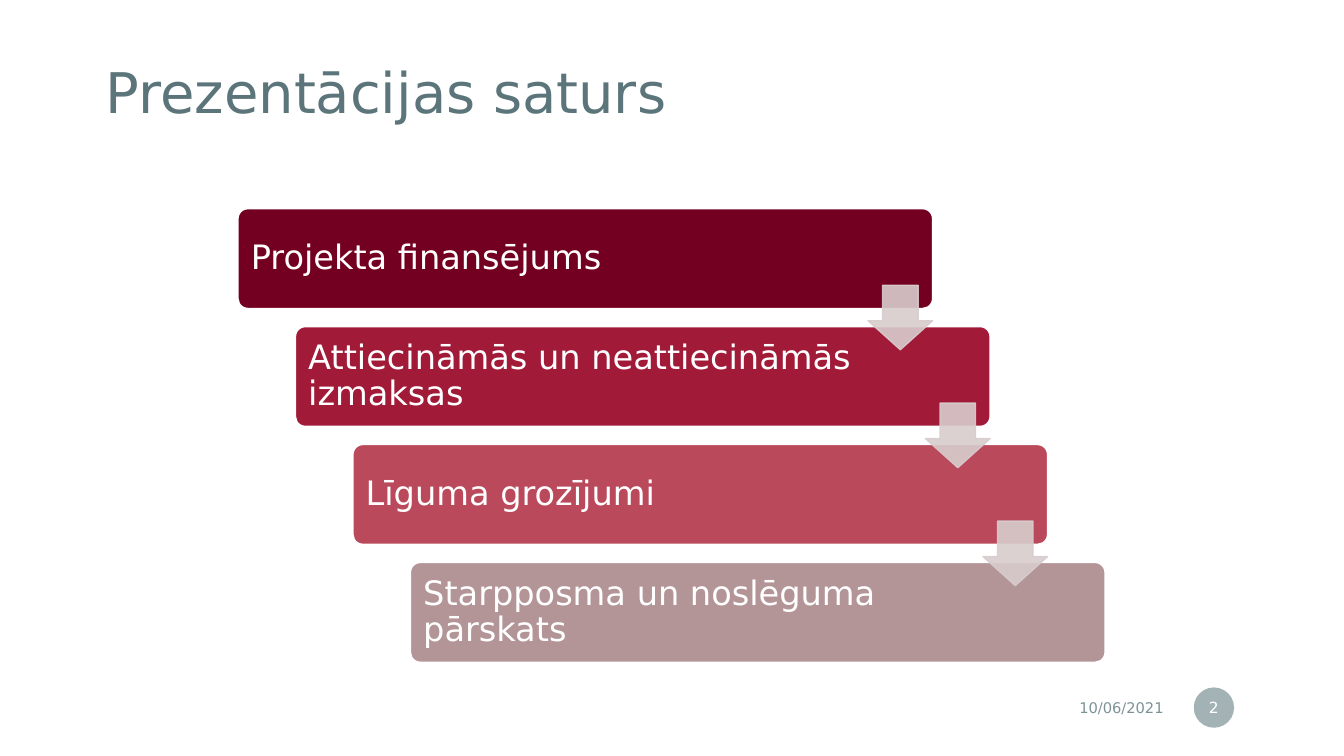
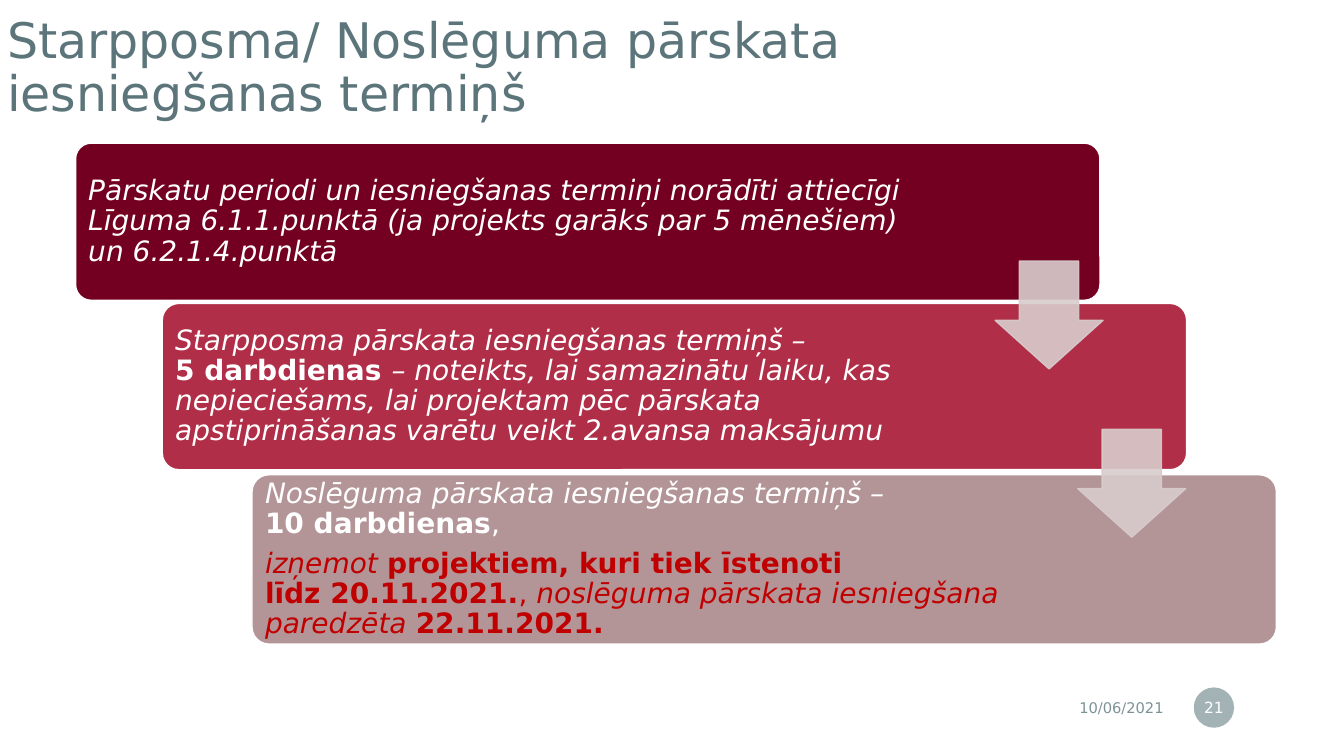
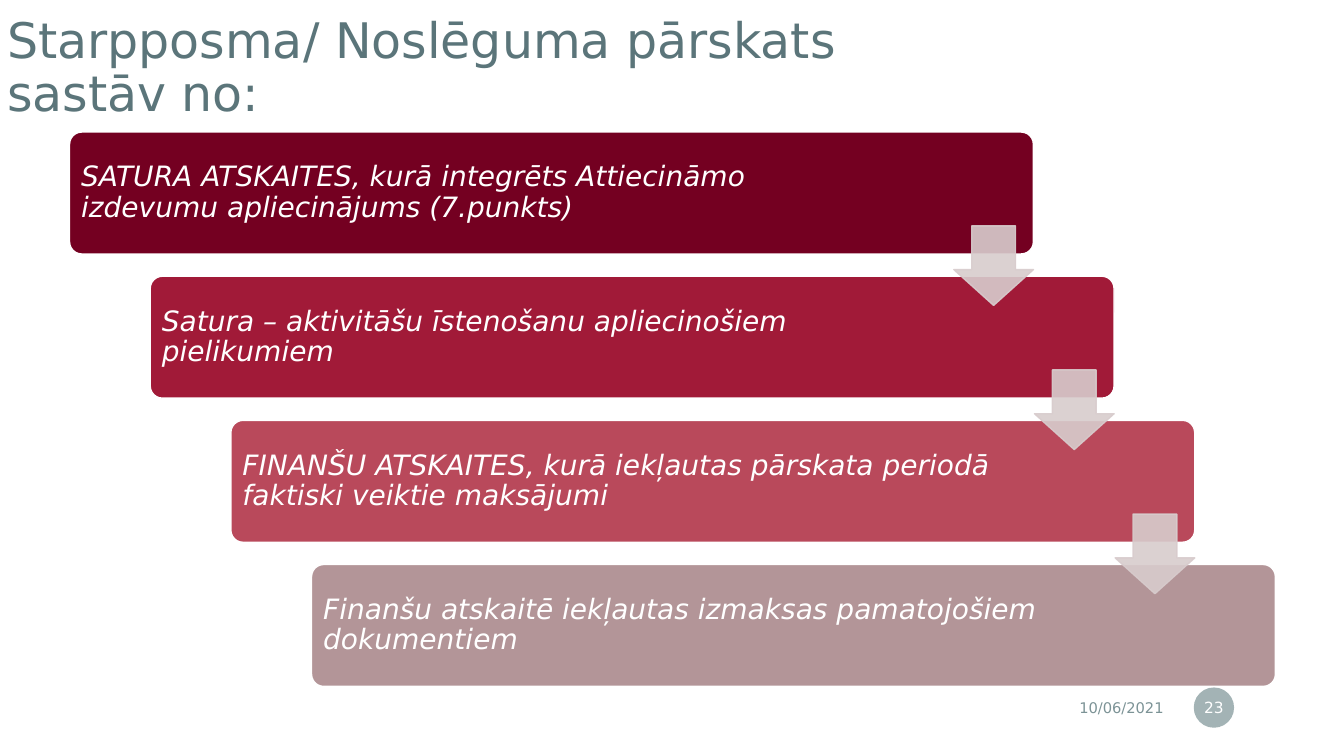
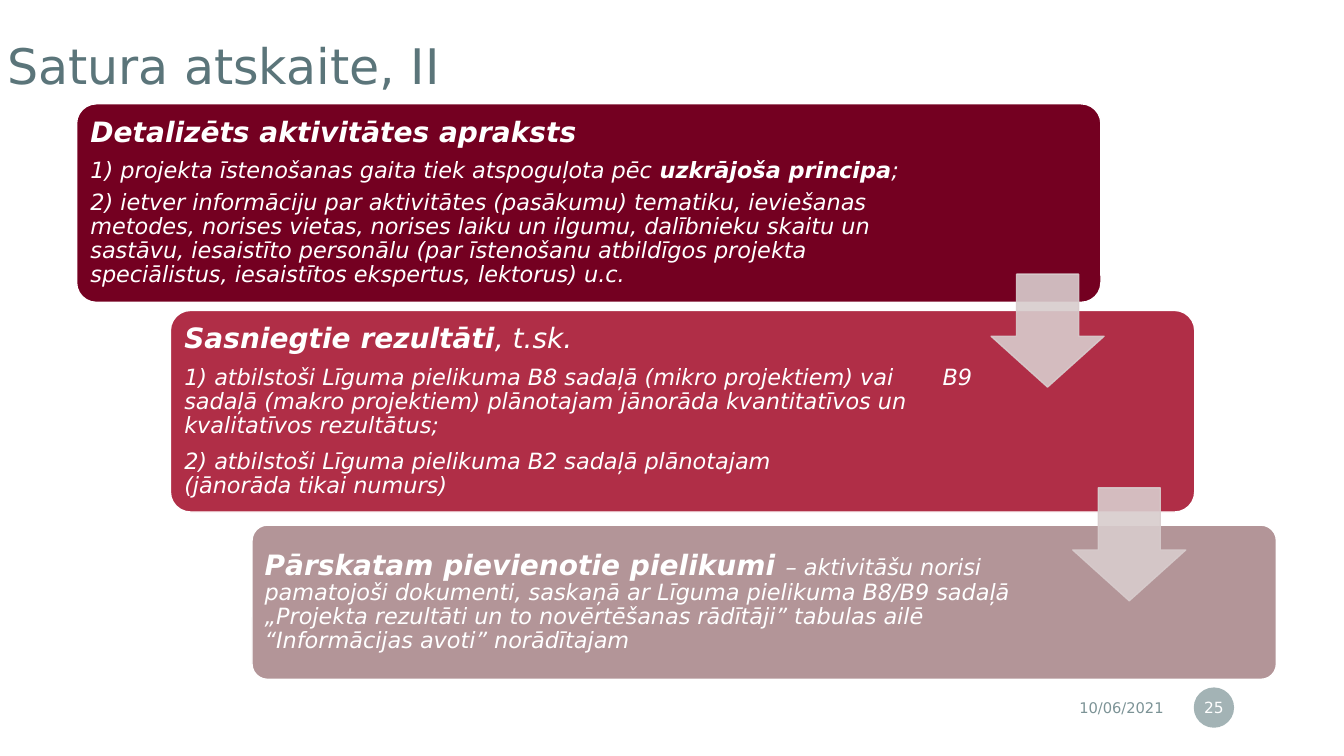
from dataclasses import dataclass

from lxml.etree import SubElement
from pptx import Presentation
from pptx.dml.color import RGBColor
from pptx.enum.shapes import MSO_SHAPE as SHAPE
from pptx.enum.text import MSO_ANCHOR as ANCHOR, MSO_AUTO_SIZE as AUTO, PP_ALIGN as ALIGN
from pptx.oxml.ns import qn
from pptx.util import Inches, Pt

FONT = "DejaVu Sans"
WHITE = RGBColor(0xFF, 0xFF, 0xFF)
SLATE = RGBColor(0x5B, 0x75, 0x7A)
GREY = RGBColor(0x7C, 0x93, 0x96)
WINE = RGBColor(0x74, 0x00, 0x21)
RUBY = RGBColor(0xA1, 0x1A, 0x38)
CRIMSON = RGBColor(0xB0, 0x2E, 0x47)
ROSE = RGBColor(0xB9, 0x49, 0x5B)
DUST = RGBColor(0xB3, 0x95, 0x98)
ARROW = RGBColor(0xD8, 0xCC, 0xCD)
RED = RGBColor(0xC0, 0x00, 0x00)
FOUR = (WINE, RUBY, ROSE, DUST)
THREE = (WINE, CRIMSON, DUST)


@dataclass
class Para:
    """Paragraph of (text, style[, size]) runs, where style may hold b and i."""
    runs: list
    size: float = 20
    color: RGBColor = WHITE
    gap: float = 7
    tab: float = 0


class Deck:
    """Presentation style together with the slide being built."""

    def __init__(self):
        """Start an empty wide presentation."""
        self.prs = Presentation()
        self.prs.slide_width, self.prs.slide_height = Inches(13.33), Inches(7.5)

    def slide(self, title, number, at=(-0.13, 0.09, 11.41, 1.19), size=35):
        """Add a slide with its title, date and number."""
        self.s = self.prs.slides.add_slide(self.prs.slide_layouts[5])
        sp = self.s.shapes.title
        sp.left, sp.top, sp.width, sp.height = map(Inches, at)
        tf = self.frame(sp, (0.2,) * 4)
        tf.text = title
        self.style(tf.paragraphs[0], size, SLATE)
        self.footer(number)

    def frame(self, sp, insets):
        """Prepare the text frame of a shape."""
        tf = sp.text_frame
        tf.word_wrap, tf.auto_size = True, AUTO.NONE
        tf.vertical_anchor = ANCHOR.MIDDLE
        tf.margin_left, tf.margin_top, tf.margin_right, tf.margin_bottom = map(Inches, insets)
        return tf

    def style(self, p, size, color, align=ALIGN.LEFT, spacing=0.9):
        """Format a whole paragraph."""
        p.alignment, p.line_spacing = align, spacing
        p.font.name, p.font.size, p.font.color.rgb = FONT, Pt(size), color

    def shape(self, kind, at, color, line=None, alpha=100):
        """Add a flat preset shape."""
        sp = self.s.shapes.add_shape(kind, *map(Inches, at))
        sp.shadow.inherit = False
        sp.fill.solid()
        sp.fill.fore_color.rgb = color
        if line is None:
            sp.line.fill.background()
        else:
            sp.line.color.rgb, sp.line.width = line, Pt(1)
        if alpha < 100:
            for clr in sp._element.spPr.iter(qn("a:srgbClr")):
                SubElement(clr, qn("a:alpha"), val=str(alpha * 1000))
        return sp

    def footer(self, number):
        """Add the date and the numbered disc."""
        sp = self.s.shapes.add_textbox(*map(Inches, (8.63, 6.84, 3.01, 0.35)))
        tf = self.frame(sp, (0.1, 0.05, 0.1, 0.05))
        tf.text = "10/06/2021"
        self.style(tf.paragraphs[0], 10.5, GREY, ALIGN.RIGHT, 1)
        sp = self.shape(SHAPE.OVAL, (11.84, 6.82, 0.4, 0.4), GREY, alpha=70)
        tf = self.frame(sp, (0.02, 0.05, 0.02, 0.05))
        tf.text = str(number)
        self.style(tf.paragraphs[0], 11, WHITE, ALIGN.CENTER, 1)

    def band(self, at, color, paras, right, inset):
        """Add a rounded band with text kept clear of its right end."""
        sp = self.shape(SHAPE.ROUNDED_RECTANGLE, at, color, WHITE)
        sp.adjustments[0] = 0.1
        tf = self.frame(sp, (inset, inset, right, inset))
        for i, para in enumerate(paras):
            p = tf.add_paragraph() if i else tf.paragraphs[0]
            self.fill(p, para)
            if i < len(paras) - 1:
                p.space_after = Pt(para.gap)

    def fill(self, p, para):
        """Write the runs of a paragraph."""
        if para.tab:
            tabs = SubElement(p._p.get_or_add_pPr(), qn("a:tabLst"))
            SubElement(tabs, qn("a:tab"), pos=str(Inches(para.tab)), algn="l")
        self.style(p, para.size, para.color)
        for text, style, *size in para.runs:
            for i, part in enumerate(text.split("\n")):
                if i:
                    p.add_line_break()
                if part:
                    r = p.add_run()
                    r.text = part
                    r.font.bold, r.font.italic = "b" in style, "i" in style
                    if size:
                        r.font.size = Pt(size[0])

    def arrow(self, x, y, size):
        """Add a translucent arrow pointing down."""
        sp = self.shape(SHAPE.DOWN_ARROW, (x, y, size, size), ARROW, ARROW, 90)
        sp.adjustments[0], sp.adjustments[1] = 0.55, 0.45

    def stairs(self, start, step, size, texts, rights, inset, arrow, drop):
        """Add four evenly stepped bands joined by arrows."""
        (x, y), (dx, dy), (w, h) = start, step, size
        spots = [(x + i * dx, y + i * dy) for i in range(len(texts))]
        for (left, top), color, para, right in zip(spots, FOUR, texts, rights):
            self.band((left, top, w, h), color, [para], right, inset)
        for left, top in spots[:-1]:
            self.arrow(left + w - arrow, top + drop, arrow)

    def steps(self, bands, arrows, arrow):
        """Add three bands of their own heights joined by arrows."""
        for (x, y, h, right, paras), color in zip(bands, THREE):
            self.band((x, y, 10.16, h), color, paras, right, 0.08)
        for x, y in arrows:
            self.arrow(x, y, arrow)


def main():
    """Build and save the slides."""
    deck = Deck()

    deck.slide("Prezentācijas saturs", 2, (0.85, 0.35, 8.39, 1.19), 40)
    topics = ("Projekta finansējums", "Attiecināmās un neattiecināmās izmaksas",
              "Līguma grozījumi", "Starpposma un noslēguma pārskats")
    deck.stairs((2.36, 2.07), (0.57, 1.17), (6.89, 0.99),
                [Para([(t, "")], 24) for t in topics],
                (1.19, 1.32, 1.32, 1.32), 0.1, 0.64, 0.76)

    deck.slide("Starpposma/ Noslēguma pārskata iesniegšanas termiņš", 21)
    deck.steps([
        (0.75, 1.42, 1.56, 1.77, [Para([
            ("Pārskatu periodi un iesniegšanas termiņi norādīti attiecīgi Līguma 6.1.1.punktā "
             "(ja projekts garāks par 5 mēnešiem) un 6.2.1.4.punktā", "i")])]),
        (1.61, 3.01, 1.65, 2.06, [Para([
            ("Starpposma pārskata iesniegšanas termiņš –\n", "i"),
            ("5 darbdienas ", "b"),
            ("– noteikts, lai samazinātu laiku, kas nepieciešams, lai projektam pēc pārskata "
             "apstiprināšanas varētu veikt 2.avansa maksājumu", "i")])]),
        (2.5, 4.71, 1.68, 2.06, [
            Para([("Noslēguma pārskata iesniegšanas termiņš –\n", "i"),
                  ("10 darbdienas", "b"), (",", "")]),
            Para([("izņemot ", "i"),
                  ("projektiem, kuri tiek īstenoti\nlīdz 20.11.2021.", "b"), (", ", ""),
                  ("noslēguma pārskata iesniegšana paredzēta ", "i"),
                  ("22.11.2021.", "b")], color=RED)]),
    ], [(9.87, 2.59), (10.69, 4.26)], 1.07)

    deck.slide("Starpposma/ Noslēguma pārskats\vsastāv no:", 23)
    parts = ("SATURA ATSKAITES, kurā integrēts Attiecināmo izdevumu apliecinājums (7.punkts)",
             "Satura – aktivitāšu īstenošanu apliecinošiem pielikumiem",
             "FINANŠU ATSKAITES, kurā iekļautas pārskata periodā faktiski veiktie maksājumi",
             "Finanšu atskaitē iekļautas izmaksas pamatojošiem dokumentiem")
    deck.stairs((0.69, 1.31), (0.8, 1.43), (9.56, 1.21),
                [Para([(t, "i")]) for t in parts],
                (1.42, 1.67, 1.67, 1.67), 0.08, 0.79, 0.93)

    deck.slide("Satura atskaite, II", 25)
    deck.steps([
        (0.76, 1.03, 1.97, 1.83, [
            Para([("Detalizēts aktivitātes apraksts", "bi")]),
            Para([("1) projekta īstenošanas gaita tiek atspoguļota pēc ", "i"),
                  ("uzkrājoša principa", "bi"), (";", "i")], 16, gap=5.6),
            Para([("2) ietver informāciju par aktivitātes (pasākumu) tematiku, ieviešanas "
                   "metodes, norises vietas, norises laiku un ilgumu, dalībnieku skaitu un "
                   "sastāvu, iesaistīto personālu (par īstenošanu atbildīgos projekta "
                   "speciālistus, iesaistītos ekspertus, lektorus) u.c.", "i")], 16)]),
        (1.69, 3.08, 2, 2.09, [
            Para([("Sasniegtie rezultāti", "bi"), (", t.sk.", "i")], gap=8.4),
            Para([("1) atbilstoši Līguma pielikuma B8 sadaļā (mikro projektiem) vai\tB9 sadaļā "
                   "(makro projektiem) plānotajam jānorāda kvantitatīvos un kvalitatīvos "
                   "rezultātus;", "i")], 16, gap=8.4, tab=7.52),
            Para([("2) atbilstoši Līguma pielikuma B2 sadaļā plānotajam\n"
                   "(jānorāda tikai numurs)", "i")], 16)]),
        (2.5, 5.21, 1.53, 2.1, [Para([
            ("Pārskatam pievienotie pielikumi ", "bi", 20),
            ("– aktivitāšu norisi pamatojoši dokumenti, saskaņā ar Līguma pielikuma B8/B9 "
             "sadaļā „Projekta rezultāti un to novērtēšanas rādītāji” tabulas ailē "
             "“Informācijas avoti” norādītajam", "i")], 16)]),
    ], [(9.83, 2.72), (10.64, 4.84)], 1.12)

    deck.prs.save("out.pptx")


if __name__ == "__main__":
    main()
